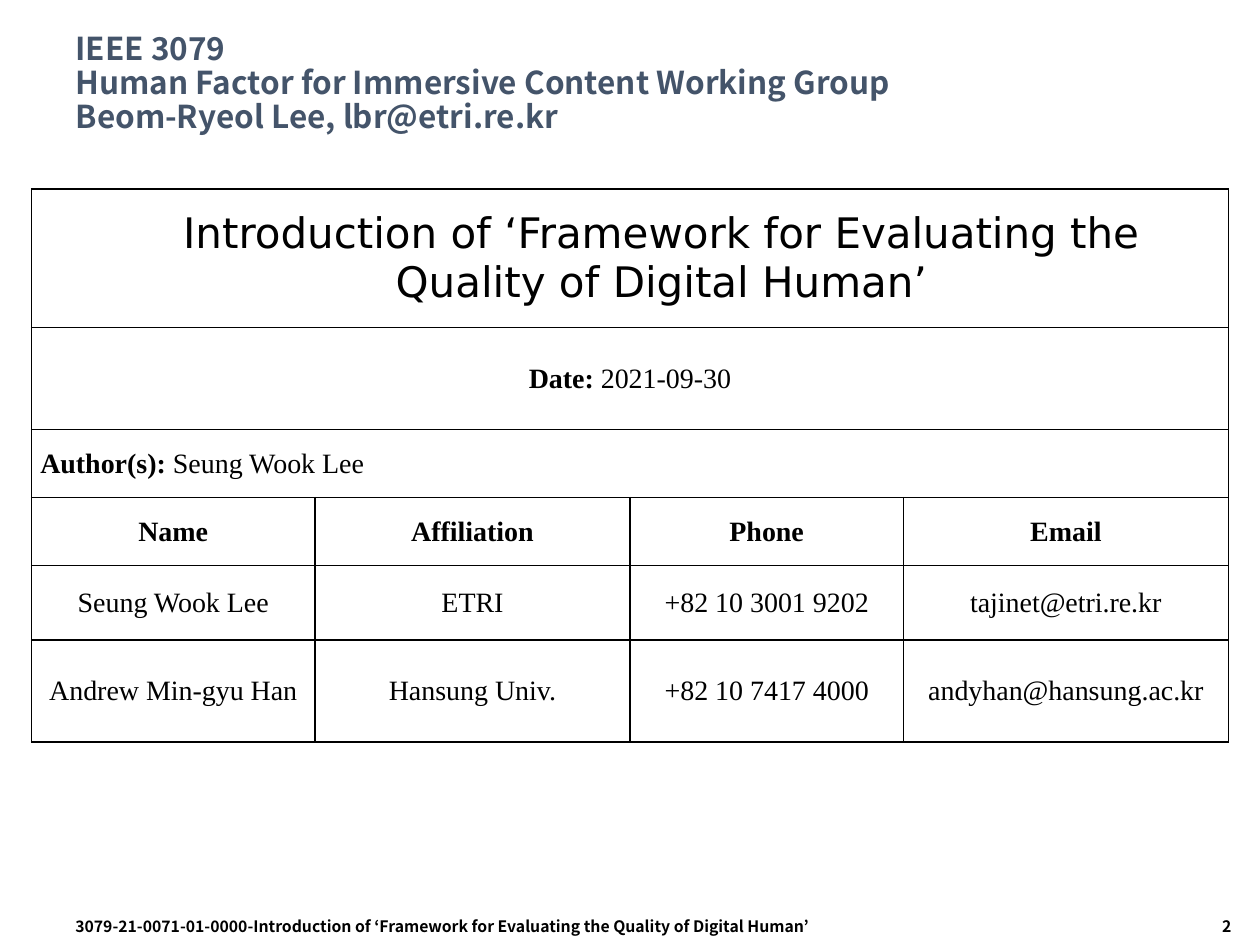
from dataclasses import dataclass

from lxml.etree import SubElement
from pptx import Presentation
from pptx.dml.color import RGBColor
from pptx.enum.text import MSO_ANCHOR, PP_ALIGN
from pptx.oxml.ns import qn
from pptx.slide import Slide
from pptx.table import _Cell
from pptx.text.text import _Paragraph
from pptx.util import Inches, Pt

BLACK = RGBColor(0x00, 0x00, 0x00)
WHITE = RGBColor(0xFF, 0xFF, 0xFF)
SLATE = RGBColor(0x44, 0x54, 0x6A)

HEADING_FONT = "Noto Sans CJK KR"
TOPIC_FONT = "DejaVu Sans"
BODY_FONT = "Times New Roman"

TITLE_LINES = [
    "IEEE 3079",
    "Human Factor for Immersive Content Working Group",
    "Beom-Ryeol Lee, lbr@etri.re.kr",
]
TOPIC = "Introduction of ‘Framework for Evaluating the Quality of Digital Human’"
COLUMN_WIDTHS = [2.25, 2.5, 2.17, 2.58]
ROW_HEIGHTS = [1.1, 0.81, 0.54, 0.54, 0.59, 0.81]
AUTHOR_ROWS = [
    ["Name", "Affiliation", "Phone", "Email"],
    ["Seung Wook Lee", "ETRI", "+82 10 3001 9202", "tajinet@etri.re.kr"],
    ["Andrew Min-gyu Han", "Hansung Univ.", "+82 10 7417 4000", "andyhan@hansung.ac.kr"],
]


@dataclass
class TextRun:
    text: str
    bold: bool = False
    size: float = 16
    font: str = BODY_FONT
    color: RGBColor = BLACK


@dataclass
class CellText:
    runs: list[TextRun]
    alignment: PP_ALIGN = PP_ALIGN.CENTER
    space_after: float = 0
    indent: float = 0


@dataclass
class FooterText:
    text: str
    left: float
    width: float
    alignment: PP_ALIGN


MERGED_ROWS = [
    CellText([TextRun(TOPIC, size=24, font=TOPIC_FONT)], space_after=12, indent=0.5),
    CellText([TextRun("Date:", bold=True), TextRun(" 2021-09-30")], space_after=12),
    CellText([TextRun("Author(s): ", bold=True), TextRun("Seung Wook Lee")], PP_ALIGN.LEFT),
]
FOOTERS = [
    FooterText("2", 8.25, 1.62, PP_ALIGN.RIGHT),
    FooterText(f"3079-21-0071-01-0000-{TOPIC}", 0.5, 7.17, PP_ALIGN.LEFT),
]


def add_run(paragraph: _Paragraph, text_run: TextRun) -> None:
    run = paragraph.add_run()
    run.text = text_run.text
    run.font.name = text_run.font
    run.font.size = Pt(text_run.size)
    run.font.bold = text_run.bold
    run.font.color.rgb = text_run.color


def add_title(slide: Slide) -> None:
    title = slide.shapes.title
    title.left, title.top = Inches(0.5), Inches(0.17)
    title.width, title.height = Inches(9), Inches(1)
    title.text_frame.vertical_anchor = MSO_ANCHOR.MIDDLE
    paragraph = title.text_frame.paragraphs[0]
    paragraph.alignment = PP_ALIGN.LEFT
    paragraph.line_spacing = 0.9
    for index, line in enumerate(TITLE_LINES):
        if index:
            paragraph.add_line_break()
        add_run(paragraph, TextRun(line, True, 18, HEADING_FONT, SLATE))


def set_borders(cell: _Cell) -> None:
    properties = cell._tc.get_or_add_tcPr()
    for index, side in enumerate(("a:lnL", "a:lnR", "a:lnT", "a:lnB")):
        line = SubElement(properties, qn(side), w=str(Pt(1)))
        fill = SubElement(line, qn("a:solidFill"))
        SubElement(fill, qn("a:srgbClr"), val=str(BLACK))
        properties.remove(line)
        properties.insert(index, line)


def fill_cell(cell: _Cell, content: CellText) -> None:
    cell.vertical_anchor = MSO_ANCHOR.MIDDLE
    paragraph = cell.text_frame.paragraphs[0]
    paragraph.alignment = content.alignment
    paragraph.space_after = Pt(content.space_after)
    if content.indent:
        paragraph._p.get_or_add_pPr().set("marL", str(Inches(content.indent)))
    for text_run in content.runs:
        add_run(paragraph, text_run)


def add_author_table(slide: Slide) -> None:
    table = slide.shapes.add_table(
        len(ROW_HEIGHTS), len(COLUMN_WIDTHS), Inches(0.25), Inches(1.5),
        Inches(sum(COLUMN_WIDTHS)), Inches(sum(ROW_HEIGHTS)),
    ).table
    table.first_row = table.horz_banding = False
    for column, width in zip(table.columns, COLUMN_WIDTHS):
        column.width = Inches(width)
    for row, height in zip(table.rows, ROW_HEIGHTS):
        row.height = Inches(height)
    for cell in table.iter_cells():
        cell.margin_left = cell.margin_right = Inches(0.07)
        cell.margin_top = cell.margin_bottom = 0
        cell.fill.solid()
        cell.fill.fore_color.rgb = WHITE
        set_borders(cell)

    for row_index, content in enumerate(MERGED_ROWS):
        first_cell = table.cell(row_index, 0)
        first_cell.merge(table.cell(row_index, len(COLUMN_WIDTHS) - 1))
        fill_cell(first_cell, content)
    for row_index, values in enumerate(AUTHOR_ROWS, start=len(MERGED_ROWS)):
        is_header = row_index == len(MERGED_ROWS)
        for column_index, value in enumerate(values):
            content = CellText([TextRun(value, bold=is_header)])
            fill_cell(table.cell(row_index, column_index), content)


def add_footer(slide: Slide, footer: FooterText) -> None:
    shape = slide.shapes.add_textbox(
        Inches(footer.left), Inches(7.23), Inches(footer.width), Inches(0.27)
    )
    shape.text_frame.word_wrap = True
    paragraph = shape.text_frame.paragraphs[0]
    paragraph.alignment = footer.alignment
    add_run(paragraph, TextRun(footer.text, True, 9, HEADING_FONT))


def main() -> None:
    presentation = Presentation()
    presentation.slide_width = Inches(10)
    presentation.slide_height = Inches(7.5)
    slide = presentation.slides.add_slide(presentation.slide_layouts[5])
    add_author_table(slide)
    add_title(slide)
    for footer in FOOTERS:
        add_footer(slide, footer)
    presentation.save("out.pptx")


if __name__ == "__main__":
    main()
